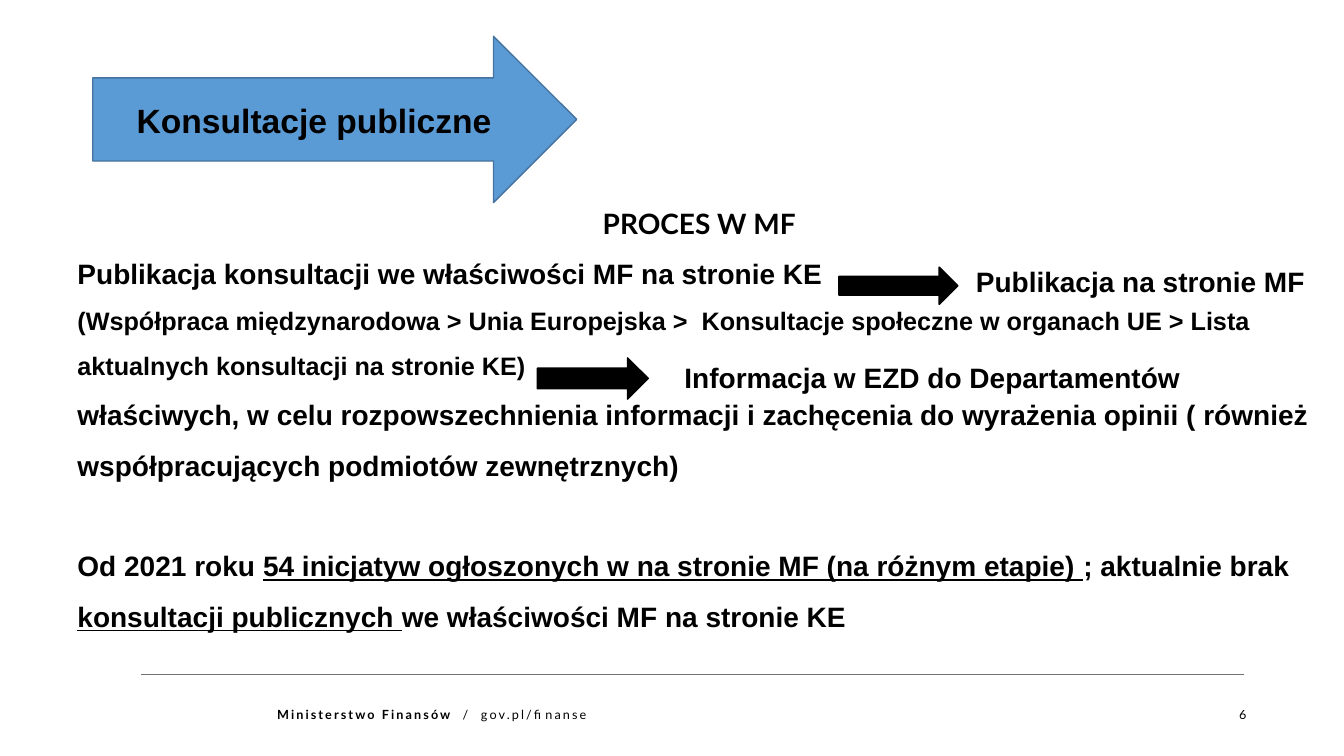
from pptx import Presentation
from pptx.dml.color import RGBColor
from pptx.enum.shapes import MSO_CONNECTOR, MSO_SHAPE
from pptx.enum.text import MSO_ANCHOR, PP_ALIGN
from pptx.oxml.ns import qn
from pptx.util import Inches, Pt
from lxml import etree


def color(value):
    return RGBColor.from_string(value)


def add_run(p, text, size, font="Arial", bold=True, underline=False):
    r = p.add_run()
    r.text = text
    r.font.name, r.font.size = font, Pt(size)
    r.font.bold, r.font.underline = bold, underline
    r.font.color.rgb = color("000000")
    return r


prs = Presentation()
prs.slide_width, prs.slide_height = Inches(13.33), Inches(7.5)
s = prs.slides.add_slide(prs.slide_layouts[5])

# Footer rule
rule = s.shapes.add_connector(
    MSO_CONNECTOR.STRAIGHT, Inches(1.4), Inches(6.69), Inches(12.34), Inches(6.69))
rule.line.color.rgb = color("767171")
rule.line.width = Pt(0.5)
etree.SubElement(rule._element.spPr, qn("a:effectLst"))

# Footer text and page number
footers = [
    (2.65, 4.52, PP_ALIGN.LEFT,
     [("Ministerstwo Finansów\u00a0 ", True), ("/\u00a0 gov.pl/finanse", False)]),
    (11.95, 0.51, PP_ALIGN.RIGHT, [("6", False)]),
]
for left, width, align, parts in footers:
    tf = s.shapes.add_textbox(
        Inches(left), Inches(6.98), Inches(width), Inches(0.23)).text_frame
    tf.word_wrap = True
    p = tf.paragraphs[0]
    p.alignment, p.line_spacing = align, 0.9
    for text, bold in parts:
        r = add_run(p, text, 9, "Lato", bold)
        r.font._element.set("spc", "150")

# Process description: alignment, space before, runs (text, size, font, underline)
process = [
    (PP_ALIGN.CENTER, 0, [("PROCES W MF", 20, "Lato", False)]),
    (PP_ALIGN.LEFT, 0, [
        ("Publikacja konsultacji we właściwości MF na stronie KE", 20, "Arial", False)]),
    (PP_ALIGN.LEFT, 0, [
        ("(Współpraca międzynarodowa > Unia Europejska >  Konsultacje społeczne "
         "w organach UE > Lista aktualnych konsultacji na stronie KE)", 18, "Arial", False)]),
    (PP_ALIGN.LEFT, 0, [
        ("właściwych, w celu rozpowszechnienia informacji i zachęcenia do wyrażenia "
         "opinii ( również współpracujących podmiotów zewnętrznych)", 20, "Arial", False)]),
    (PP_ALIGN.LEFT, 36, [
        ("Od 2021 roku ", 20, "Arial", False),
        ("54 inicjatyw ogłoszonych w na stronie MF (na różnym etapie) ", 20, "Arial", True),
        ("; aktualnie brak ", 20, "Arial", False),
        ("konsultacji publicznych ", 20, "Arial", True),
        ("we właściwości MF na stronie KE", 20, "Arial", False)]),
]
tf = s.shapes.add_textbox(Inches(0.67), Inches(1.83), Inches(12.53), Inches(4.6)).text_frame
tf.word_wrap = True
for i, (align, before, parts) in enumerate(process):
    p = tf.add_paragraph() if i else tf.paragraphs[0]
    p.alignment, p.line_spacing, p.space_before = align, 1.5, Pt(before)
    for text, size, font, underline in parts:
        add_run(p, text, size, font, underline=underline)

# Arrows: title banner and two process steps
arrows = [
    (0.92, 0.36, 4.8, 1.65, "5B9BD5", "43739E"),
    (8.32, 2.65, 1.18, 0.37, "000000", "000000"),
    (5.33, 3.55, 1.1, 0.41, "000000", "000000"),
]
for left, top, width, height, fill, line in arrows:
    sp = s.shapes.add_shape(
        MSO_SHAPE.RIGHT_ARROW, Inches(left), Inches(top), Inches(width), Inches(height))
    sp.shadow.inherit = False
    sp.fill.solid()
    sp.fill.fore_color.rgb = color(fill)
    sp.line.color.rgb = color(line)
    sp.line.width = Pt(1)

# Results the step arrows lead to
results = [
    (9.58, 2.57, 3.62, "Publikacja na stronie MF"),
    (6.69, 3.53, 6.42, "Informacja w EZD do Departamentów"),
]
for left, top, width, text in results:
    tf = s.shapes.add_textbox(
        Inches(left), Inches(top), Inches(width), Inches(0.44)).text_frame
    tf.word_wrap = True
    add_run(tf.paragraphs[0], text, 20)

# Title, brought in front of its banner
title = s.shapes.title
title.left, title.top = Inches(0.92), Inches(0.78)
title.width, title.height = Inches(4.39), Inches(0.83)
tf = title.text_frame
tf.vertical_anchor = MSO_ANCHOR.MIDDLE
p = tf.paragraphs[0]
p.alignment = PP_ALIGN.CENTER
add_run(p, "Konsultacje publiczne", 24)
s.shapes._spTree.append(title._element)

prs.save("out.pptx")
